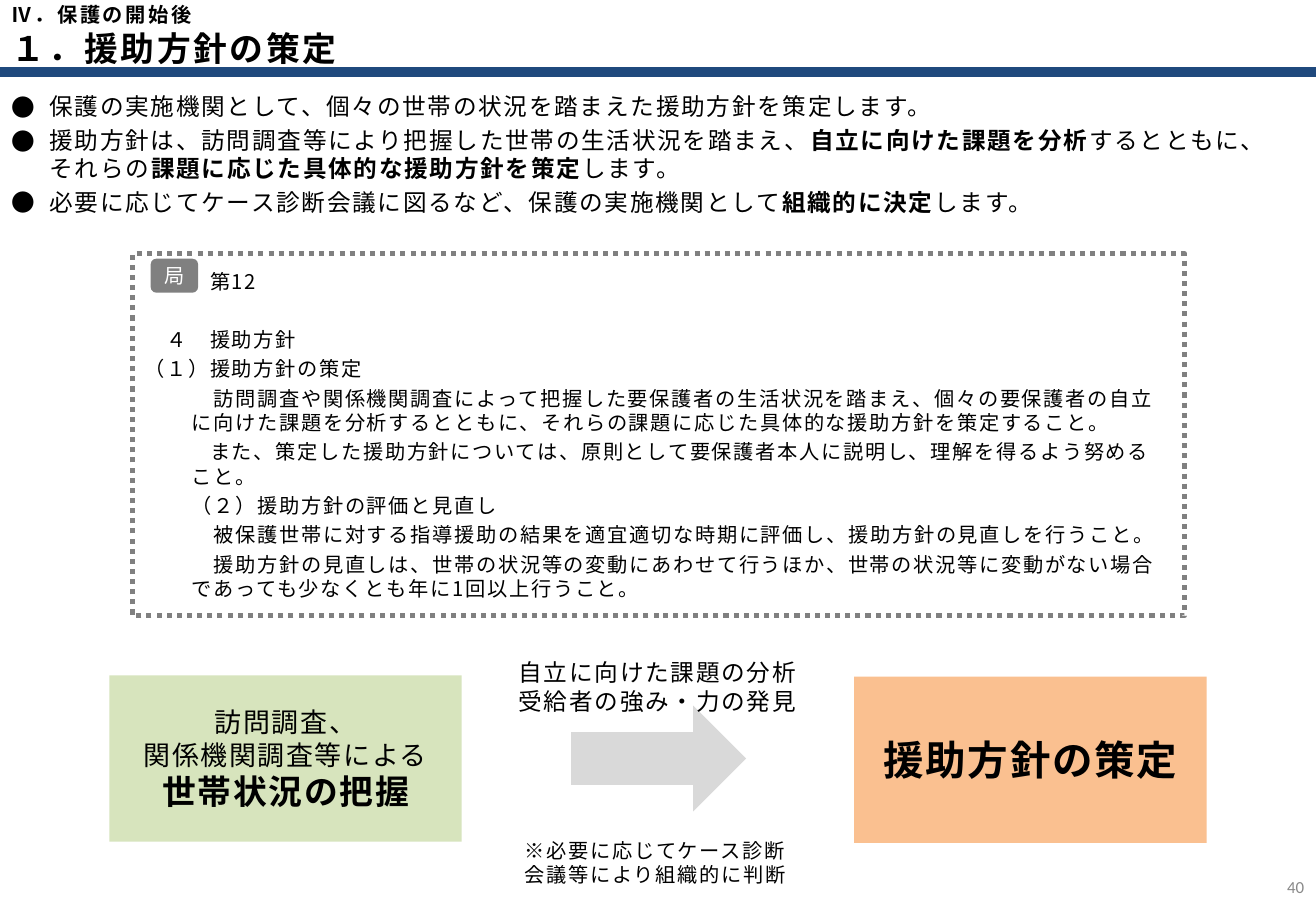
from dataclasses import dataclass

from lxml import etree
from pptx import Presentation
from pptx.dml.color import RGBColor
from pptx.enum.dml import MSO_LINE
from pptx.enum.lang import MSO_LANGUAGE_ID
from pptx.enum.shapes import MSO_CONNECTOR, MSO_SHAPE
from pptx.enum.text import MSO_ANCHOR, PP_ALIGN
from pptx.oxml.ns import qn
from pptx.util import Emu, Pt

PX = 9144  # 100 px to the inch
FONT = "Noto Sans CJK JP"
BLACK, WHITE, GRAY, NAVY = "000000", "FFFFFF", "808080", "1F497D"
LEFT, CENTER, RIGHT = PP_ALIGN.LEFT, PP_ALIGN.CENTER, PP_ALIGN.RIGHT
TOP, MIDDLE = MSO_ANCHOR.TOP, MSO_ANCHOR.MIDDLE
RECT, ROUNDED, ARROW = MSO_SHAPE.RECTANGLE, MSO_SHAPE.ROUNDED_RECTANGLE, MSO_SHAPE.RIGHT_ARROW
STRAIGHT, DOTTED, JAPANESE = MSO_CONNECTOR.STRAIGHT, MSO_LINE.ROUND_DOT, MSO_LANGUAGE_ID.JAPANESE


@dataclass
class Para:
    """One paragraph; text between ** marks is bold."""
    text: str
    size: int = 12
    align: PP_ALIGN = LEFT
    color: str = BLACK
    font: str = FONT
    spacing: float = 1
    before: int = 0
    left: int = 0
    first: int = 0
    bullet: str = ""


@dataclass
class Box:
    """A text box, or a preset shape when kind is given."""
    x: int
    y: int
    width: int
    height: int
    paras: list[Para]
    anchor: MSO_ANCHOR = MIDDLE
    kind: MSO_SHAPE | None = None
    fill: str = ""
    dotted_line: str = ""
    inset: int = 5


def px(length: int) -> Emu:
    return Emu(length * PX)


def rgb(color: str) -> RGBColor:
    return RGBColor.from_string(color)


def format_span(span, item: Para, bold: bool) -> None:
    font = span.font
    font.name, font.size, font.bold = item.font, Pt(item.size), bold
    font.color.rgb = rgb(item.color)
    font.language_id = JAPANESE
    properties = span._r.get_or_add_rPr()
    properties.set("spc", str(int(item.spacing * 100)))
    east_asian = etree.Element(qn("a:ea"), typeface=item.font)
    properties.find(qn("a:latin")).addnext(east_asian)


def write_para(para, item: Para) -> None:
    para.alignment = item.align
    para.space_before = Pt(item.before)
    properties = para._p.get_or_add_pPr()
    properties.set("marL", str(px(item.left)))
    properties.set("indent", str(px(item.first)))
    if item.bullet:
        etree.SubElement(properties, qn("a:buFont"), typeface=item.font)
        etree.SubElement(properties, qn("a:buChar"), char=item.bullet)
    for index, part in enumerate(item.text.split("**")):
        for row, line in enumerate(part.split("\n")):
            if row:
                para.add_line_break()
            if line:
                span = para.add_run()
                span.text = line
                format_span(span, item, bold=index % 2 == 1)


def draw_box(page, box: Box) -> None:
    place = [px(length) for length in (box.x, box.y, box.width, box.height)]
    if box.kind is None:
        shape = page.shapes.add_textbox(*place)
    else:
        shape = page.shapes.add_shape(box.kind, *place)
        shape.shadow.inherit = False
        if box.fill:
            shape.fill.solid()
            shape.fill.fore_color.rgb = rgb(box.fill)
        else:
            shape.fill.background()
        if box.dotted_line:
            shape.line.color.rgb = rgb(box.dotted_line)
            shape.line.width = Pt(3)
            shape.line.dash_style = DOTTED
        else:
            shape.line.fill.background()
    frame = shape.text_frame
    frame.word_wrap = True
    frame.vertical_anchor = box.anchor
    frame.margin_left = frame.margin_right = px(10)
    frame.margin_top = frame.margin_bottom = px(box.inset)
    for index, item in enumerate(box.paras):
        write_para(frame.add_paragraph() if index else frame.paragraphs[0], item)


def draw_title_rule(page) -> None:
    rule = page.shapes.add_connector(STRAIGHT, px(0), px(59), px(1083), px(59))
    rule.line.color.rgb = rgb(NAVY)
    rule.line.width = Pt(6)
    etree.SubElement(rule._element.spPr, qn("a:effectLst"))


def point(text: str) -> Para:
    return Para(text, 14, before=3, left=31, first=-31, bullet="●")


def clause(text: str, left: int = 0, first: int = 0, before: int = 3) -> Para:
    return Para(text, left=left, first=first, before=before)


POINTS = [
    point("保護の実施機関として、個々の世帯の状況を踏まえた援助方針を策定します。"),
    point("援助方針は、訪問調査等により把握した世帯の生活状況を踏まえ、**自立に向けた課題を分析**"
          "するとともに、\nそれらの**課題に応じた具体的な援助方針を策定**します。"),
    point("必要に応じてケース診断会議に図るなど、保護の実施機関として**組織的に決定**します。"),
]
CLAUSES = [
    clause("第12", left=54),
    clause("　４　援助方針", before=20),
    clause("（１）援助方針の策定"),
    clause("　訪問調査や関係機関調査によって把握した要保護者の生活状況を踏まえ、個々の要保護者の自立に向けた"
           "課題を分析するとともに、それらの課題に応じた具体的な援助方針を策定すること。", left=39),
    clause("　また、策定した援助方針については、原則として要保護者本人に説明し、理解を得るよう努めること。",
           left=39, first=-3),
    clause("（２）援助方針の評価と見直し", left=39),
    clause("　被保護世帯に対する指導援助の結果を適宜適切な時期に評価し、援助方針の見直しを行うこと。", left=39),
    clause("　援助方針の見直しは、世帯の状況等の変動にあわせて行うほか、世帯の状況等に変動がない場合であっても"
           "少なくとも年に1回以上行うこと。", left=39),
]
SURVEY = [
    Para("訪問調査、", 16, CENTER),
    Para("関係機関調査等による", 16, CENTER),
    Para("**世帯状況の把握**", 20, CENTER),
]
ANALYSIS = [Para(text, 14, CENTER) for text in ("自立に向けた課題の分析", "受給者の強み・力の発見")]
BOXES = [
    Box(0, 71, 1083, 122, POINTS, TOP),
    Box(1042, 710, 41, 40, [Para("40", 10, RIGHT, "898989", "Calibri", 0)]),
    Box(0, 1, 907, 21, [Para("**Ⅳ．保護の開始後**", spacing=1.5)], inset=0),
    Box(0, 20, 907, 39, [Para("**１．援助方針の策定**", 20, spacing=1.5)], inset=0),
    Box(109, 209, 866, 298, CLAUSES, kind=RECT, dotted_line=GRAY),
    Box(124, 213, 39, 28, [Para("局", 12, CENTER, WHITE, spacing=0)], kind=ROUNDED, fill=GRAY, inset=0),
    Box(90, 556, 290, 137, SURVEY, kind=RECT, fill="D7E4BD"),
    Box(470, 581, 144, 87, [], kind=ARROW, fill="D9D9D9"),
    Box(703, 557, 290, 137, [Para("**援助方針の策定**", 24, CENTER)], kind=RECT, fill="FAC090"),
    Box(413, 537, 256, 57, ANALYSIS, TOP),
    Box(422, 685, 239, 50, [Para("※必要に応じてケース診断会議等により組織的に判断")], TOP),
]


def main() -> None:
    deck = Presentation()
    deck.slide_width, deck.slide_height = px(1083), px(750)
    page = deck.slides.add_slide(deck.slide_layouts[6])
    draw_title_rule(page)
    for box in BOXES:
        draw_box(page, box)
    deck.save("out.pptx")


if __name__ == "__main__":
    main()
